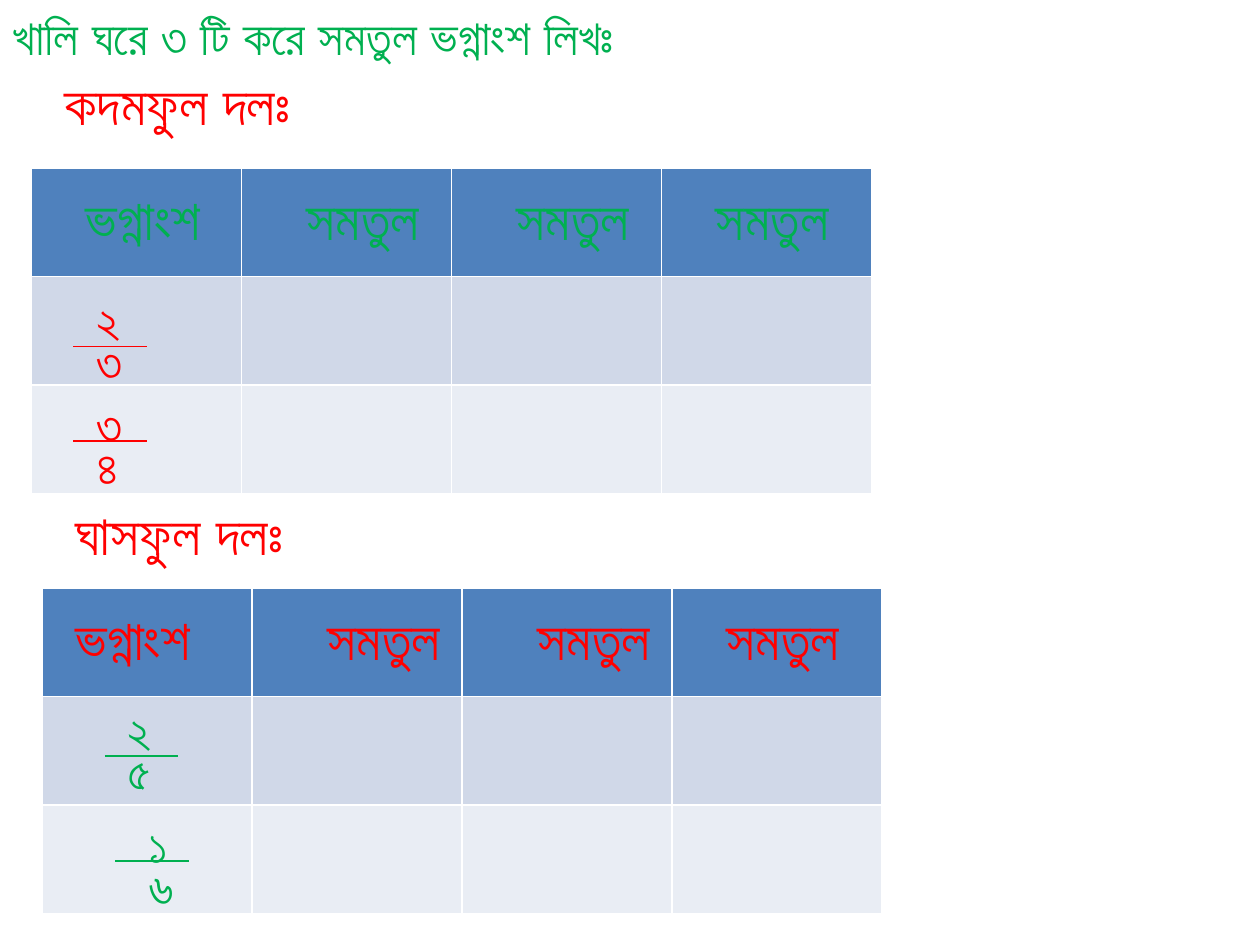
from dataclasses import dataclass

from lxml import etree
from pptx import Presentation
from pptx.dml.color import RGBColor
from pptx.enum.shapes import MSO_CONNECTOR
from pptx.enum.text import MSO_ANCHOR, MSO_AUTO_SIZE, PP_ALIGN
from pptx.oxml.ns import qn
from pptx.slide import Slide
from pptx.util import Inches, Pt

LINE = MSO_CONNECTOR.STRAIGHT
GROW = MSO_AUTO_SIZE.SHAPE_TO_FIT_TEXT
TOP = MSO_ANCHOR.TOP
LEFT = PP_ALIGN.LEFT
UNIT = Inches(1) / 12
WIDE, HIGH = 120, 90


@dataclass(frozen=True)
class Theme:
    font: str = "Arial"
    red: str = "FF0000"
    green: str = "00B050"
    fills: tuple = ("4F81BD", "D0D8E8", "E9EDF4")
    large: int = 32
    small: int = 28
    rule: float = 0.75


@dataclass(frozen=True)
class Label:
    text: str
    col: float
    row: float
    wide: float
    size: int
    tint: str
    wrap: bool = False


@dataclass(frozen=True)
class Ratio:
    digits: str
    col: int
    row: int
    bar: tuple


@dataclass(frozen=True)
class Team:
    name: Label
    grid: tuple
    heads: tuple
    ratios: tuple
    tint: str


THEME = Theme()
DIGITS = {"১": 4.3, "২": 4.6, "৩": 4.9, "৪": 4.3, "৫": 4.7, "৬": 4.9}
TITLE = Label("খালি ঘরে ৩ টি করে সমতুল ভগ্নাংশ লিখঃ", 0, 0, 62.3, THEME.small, THEME.green)


def heads(row: int, first: tuple, cols: tuple, tint: str) -> tuple:
    same = [Label("সমতুল", col, row, 13.7, THEME.large, tint) for col in cols]
    return (Label("ভগ্নাংশ", first[0], row, first[1], THEME.large, tint, True), *same)


TEAMS = (
    Team(
        Label("কদমফুল দলঃ", 5, 6, 25.7, THEME.large, THEME.red),
        (3, 16),
        heads(17, (7, 16), (28, 48, 67), THEME.green),
        (Ratio("২৩", 8, 27, (7, 33)), Ratio("৩৪", 8, 37, (7, 42))),
        THEME.red,
    ),
    Team(
        Label("ঘাসফুল দলঃ", 6, 47, 23.5, THEME.large, THEME.red),
        (4, 56),
        heads(57, (6, 17), (30, 50, 68), THEME.red),
        (Ratio("২৫", 11, 66, (10, 72)), Ratio("১৬", 13, 77, (11, 82))),
        THEME.green,
    ),
)


def span(count: float) -> int:
    return round(count * UNIT)


def fill_text(shape, label: Label) -> None:
    tall = 7.7 if label.size == THEME.large else 6.8
    place = {"left": label.col, "top": label.row, "width": label.wide, "height": tall}
    for name, value in place.items():
        setattr(shape, name, span(value))
    frame = shape.text_frame
    frame.text = label.text
    style = {"word_wrap": label.wrap, "auto_size": GROW, "vertical_anchor": TOP}
    for name, value in style.items():
        setattr(frame, name, value)
    para = frame.paragraphs[0]
    para.alignment = LEFT
    run = para.runs[0]
    for name, value in {"name": THEME.font, "size": Pt(label.size)}.items():
        setattr(run.font, name, value)
    run.font.color.rgb = RGBColor.from_string(label.tint)
    etree.SubElement(run.font._element, qn("a:cs"), typeface=THEME.font)


def add_label(slide: Slide, label: Label) -> None:
    fill_text(slide.shapes.add_textbox(0, 0, 0, 0), label)


def add_grid(slide: Slide, team: Team) -> None:
    col, row = team.grid
    frame = slide.shapes.add_table(3, 4, span(col), span(row), span(80), span(31))
    for line, tint in zip(frame.table.rows, THEME.fills):
        for cell in line.cells:
            cell.fill.solid()
            cell.fill.fore_color.rgb = RGBColor.from_string(tint)


def add_ratio(slide: Slide, ratio: Ratio, tint: str) -> None:
    for step, digit in enumerate(ratio.digits):
        row = ratio.row + 4 * step
        add_label(slide, Label(digit, ratio.col, row, DIGITS[digit], THEME.small, tint))
    col, row = ratio.bar
    bar = slide.shapes.add_connector(LINE, span(col), span(row), span(col + 7), span(row))
    bar.line.width = Pt(THEME.rule)
    bar.line.color.rgb = RGBColor.from_string(tint)
    etree.SubElement(bar._element.spPr, qn("a:effectLst"))


def main() -> None:
    deck = Presentation()
    deck.slide_width, deck.slide_height = span(WIDE), span(HIGH)
    slide = deck.slides.add_slide(deck.slide_layouts[5])
    fill_text(slide.shapes.title, TITLE)
    for team in TEAMS:
        add_grid(slide, team)
        for label in (team.name, *team.heads):
            add_label(slide, label)
        for ratio in team.ratios:
            add_ratio(slide, ratio, team.tint)
    deck.save("out.pptx")


if __name__ == "__main__":
    main()
